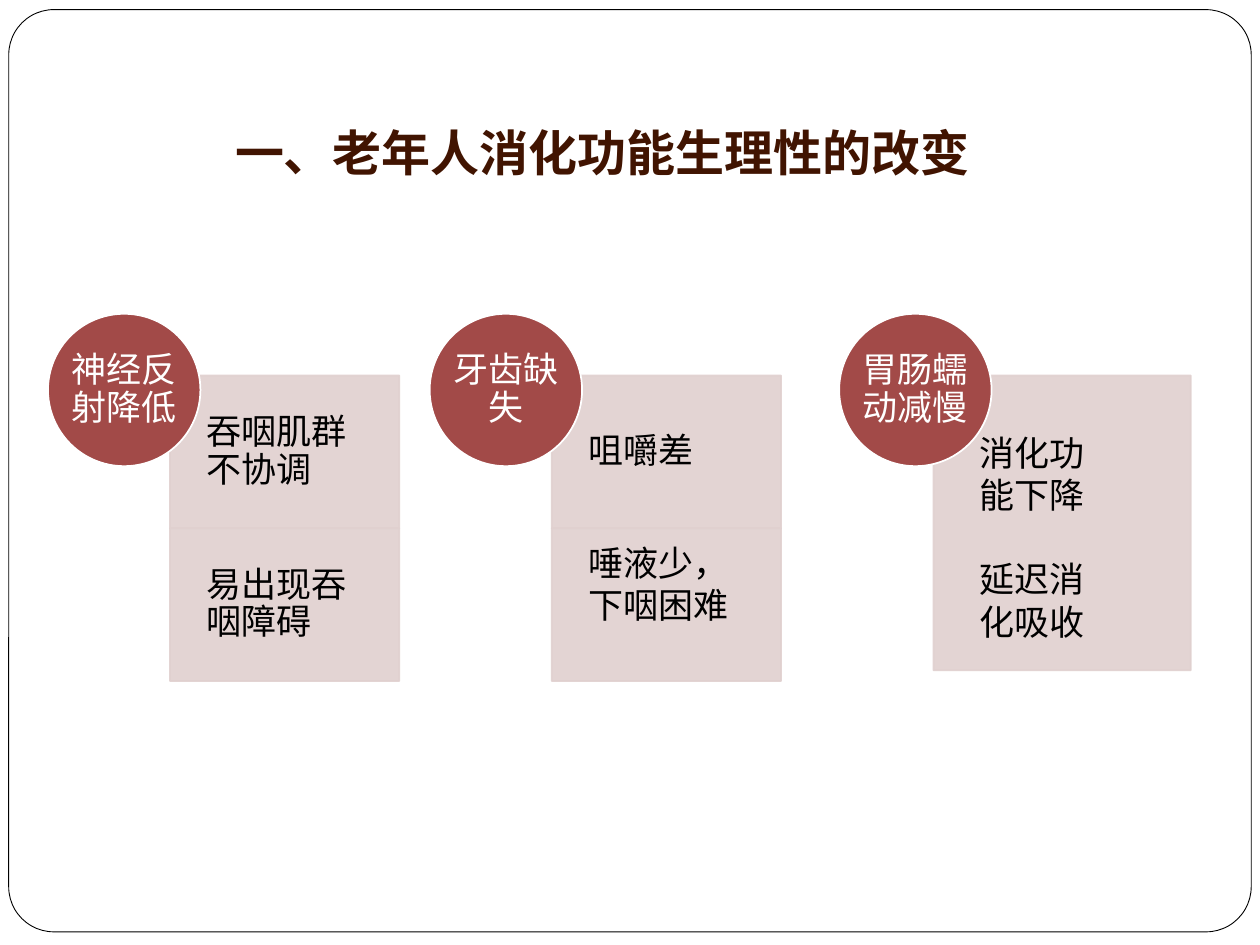
from lxml import etree
from pptx import Presentation
from pptx.dml.color import RGBColor
from pptx.enum import shapes, text
from pptx.oxml import ns
from pptx.util import Pt

# Content: circle label, circle left, and the panels beneath it
TITLE = "一、老年人消化功能生理性的改变"
CHANGES = [
    {"cause": "神经反射降低", "left": 27.4,
     "panels": [["吞咽肌群不协调"], ["易出现吞咽障碍"]]},
    {"cause": "牙齿缺失", "left": 245.5,
     "panels": [["咀嚼差"], ["唾液少，下咽困难"]]},
    {"cause": "胃肠蠕动减慢", "left": 479.5,
     "panels": [["消化功能下降", "延迟消化吸收"]]},
]

# Style
FONT = "Noto Sans CJK SC"
BROWN = RGBColor(0x41, 0x14, 0x01)
RED = RGBColor(0xA2, 0x4A, 0x48)
PINK = RGBColor(0xE0, 0xD0, 0xCF)
WHITE = RGBColor(0xFF, 0xFF, 0xFF)
BLACK = RGBColor(0, 0, 0)
TIGHT = 0.9

# Geometry in points
CIRCLE_TOP, CIRCLE_SIZE = 179.3, 87.1
PANEL_TOP, PANEL_HEIGHT = 214.6, 87.3
NARROW = {"offset": 69.8, "width": 131, "height": PANEL_HEIGHT,
          "insets": (21, 11.5, 11.5, 11.5), "spacing": TIGHT}
RAISED = {**NARROW, "insets": (21, 0, 11.5, 24), "spacing": 1}
WIDE = {"offset": 54, "width": 147, "height": 168.5,
        "insets": (26, 16, 53, 0), "spacing": 1}
PARA_GAP = 24


def add_box(page, kind, left, top, width, height, fill, line, line_width):
    box = page.shapes.add_shape(kind, Pt(left), Pt(top), Pt(width), Pt(height))
    box.shadow.inherit = False
    box.fill.solid()
    box.fill.fore_color.rgb = fill
    box.line.color.rgb = line
    box.line.width = Pt(line_width)
    return box


def set_opacity(box, percent):
    for color in box._element.spPr.iter(ns.qn("a:srgbClr")):
        etree.SubElement(color, ns.qn("a:alpha"), val=str(percent * 1000))


def write(box, lines, size, color, align, insets, anchor=text.MSO_ANCHOR.MIDDLE,
          spacing=1, bold=False):
    frame = box.text_frame
    frame.word_wrap = True
    frame.auto_size = text.MSO_AUTO_SIZE.NONE
    frame.vertical_anchor = anchor
    (frame.margin_left, frame.margin_top,
     frame.margin_right, frame.margin_bottom) = map(Pt, insets)
    for index, line in enumerate(lines):
        para = frame.add_paragraph() if index else frame.paragraphs[0]
        para.alignment = align
        para.line_spacing = spacing
        para.space_before = Pt(PARA_GAP if index else 0)
        span = para.add_run()
        span.text = line
        span.font.size = Pt(size)
        span.font.bold = bold
        span.font.color.rgb = color
        span.font.name = FONT
        latin = span._r.rPr.find(ns.qn("a:latin"))
        latin.addnext(latin.makeelement(ns.qn("a:ea"), {"typeface": FONT}))


def panel_style(change, row):
    if len(change["panels"]) == 1:
        return WIDE
    return RAISED if change["cause"] == "牙齿缺失" and row == 1 else NARROW


def add_change(page, change):
    # Panels first, so that the circle overlaps them
    for row, lines in enumerate(change["panels"]):
        style = panel_style(change, row)
        panel = add_box(page, shapes.MSO_SHAPE.RECTANGLE,
                        change["left"] + style["offset"],
                        PANEL_TOP + row * PANEL_HEIGHT,
                        style["width"], style["height"], PINK, PINK, 1)
        set_opacity(panel, 90)
        write(panel, lines, 20, BLACK, text.PP_ALIGN.LEFT, style["insets"],
              spacing=style["spacing"])
    circle = add_box(page, shapes.MSO_SHAPE.OVAL, change["left"], CIRCLE_TOP,
                     CIRCLE_SIZE, CIRCLE_SIZE, RED, WHITE, 1)
    write(circle, [change["cause"]], 20, WHITE, text.PP_ALIGN.CENTER,
          (0, 0, 0, 0), spacing=TIGHT)


def main():
    deck = Presentation()
    deck.slide_width, deck.slide_height = Pt(720), Pt(540)
    page = deck.slides.add_slide(deck.slide_layouts[5])

    # Rounded page border, behind everything
    border = add_box(page, shapes.MSO_SHAPE.ROUNDED_RECTANGLE,
                     5, 5.5, 710, 527, WHITE, BLACK, 0.5)
    border.adjustments[0] = 0.049
    page.shapes._spTree.insert(2, border._element)

    # Title
    title = page.shapes.title
    title.left, title.top, title.width, title.height = map(Pt, (20, 21, 648, 90))
    write(title, [TITLE], 28, BROWN, text.PP_ALIGN.CENTER, (7.2, 3.6, 7.2, 7.2),
          anchor=text.MSO_ANCHOR.BOTTOM, bold=True)

    # Three changes
    for change in CHANGES:
        add_change(page, change)

    deck.save("out.pptx")


if __name__ == "__main__":
    main()
